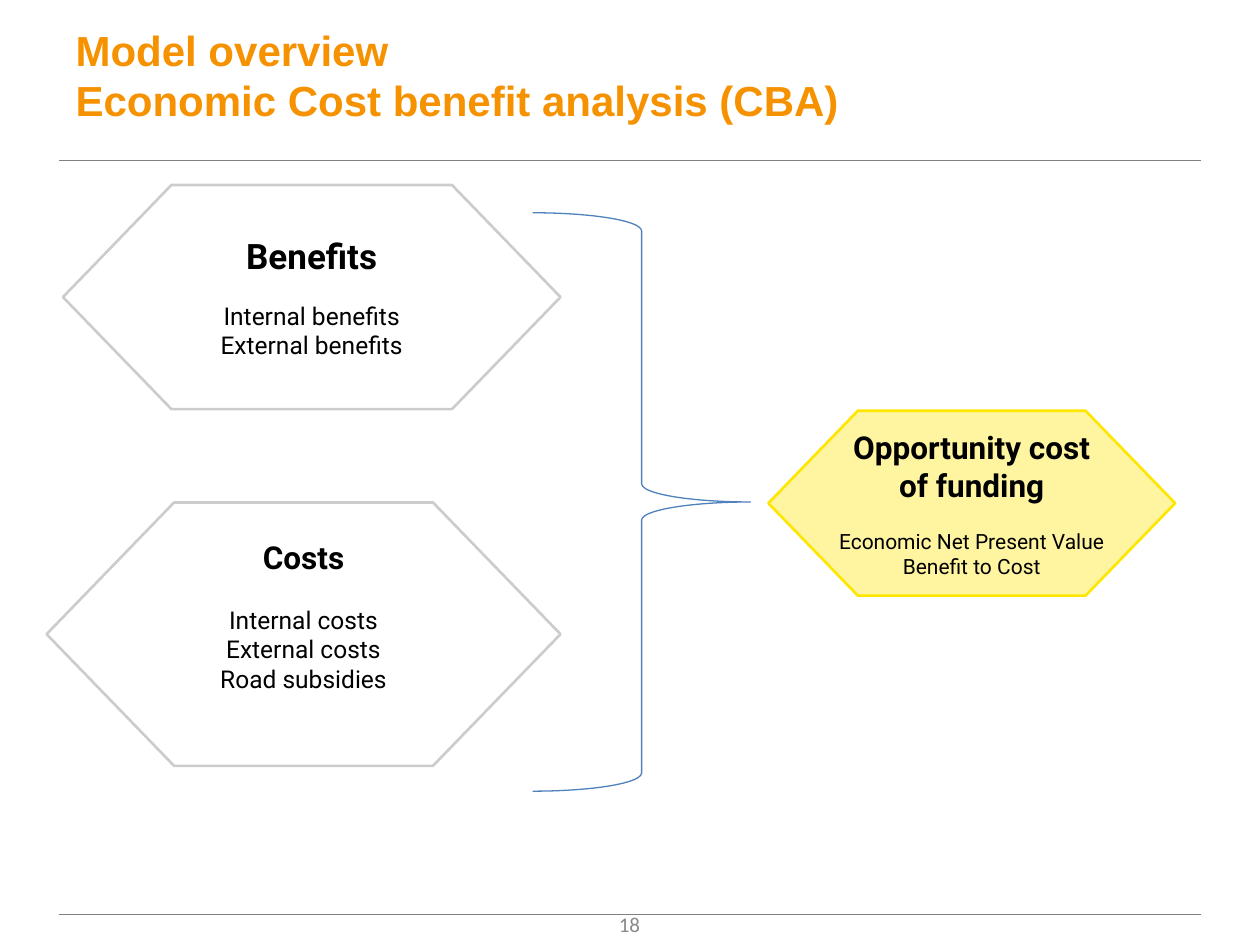
from pptx import Presentation
from pptx.dml.color import RGBColor
from pptx.enum.shapes import MSO_CONNECTOR, MSO_SHAPE
from pptx.enum.text import MSO_ANCHOR, MSO_AUTO_SIZE, PP_ALIGN
from pptx.oxml.ns import qn
from pptx.util import Cm, Pt
from lxml.etree import SubElement

THEME = {
    "title": dict(name="Arial", size=24, bold=True, color="F69200"),
    "page": dict(name="Calibri", size=12, bold=False, color="898989"),
    "text": dict(name="Roboto", color="000000"),
    "rule": "808080",
    "brace": "4F81BD",
    "white": "FFFFFF",
    "grey": "CCCCCC",
    "yellow": "FFE600",
}

TITLE = "Model overview\vEconomic Cost benefit analysis (CBA)"
TITLE_BOX = (1.27, 0.08, 22.86, 2.84)
PAGE, PAGE_BOX = "18", (9.73, 18.11, 5.92, 1.02)
RULE_X, RULE_YS = (1.19, 24.21), (3.23, 18.44)
BRACE_BOX = (10.74, 4.29, 4.39, 11.66)
INSET = 0.1

# Boxes are left, top, width, height in cm; gap is the space under the heading in points
HEXAGONS = [
    dict(box=(15.49, 8.28, 8.2, 3.73), heading="Opportunity cost of funding",
         lines=["Economic Net Present Value", "Benefit to Cost"],
         sizes=(18, 12), gap=14, fill="yellow", alpha=37, line="yellow", wrap=True),
    dict(box=(0.94, 10.13, 10.36, 5.31), heading="Costs",
         lines=["Internal costs", "External costs", "Road subsidies"],
         sizes=(18, 14), gap=16.5, fill="white", line="grey", bottom=0.85),
    dict(box=(1.27, 3.73, 10.03, 4.52), heading="Benefits",
         lines=["Internal benefits", "External benefits"],
         sizes=(20, 14), gap=14, fill="white", line="grey"),
]


def rgb(value):
    return RGBColor.from_string(value)


def cm(values):
    return [Cm(v) for v in values]


def set_font(font, name, size, bold, color):
    for key, value in dict(name=name, size=Pt(size), bold=bold).items():
        setattr(font, key, value)
    font.color.rgb = rgb(color)


def set_line(line, color, width):
    line.color.rgb = rgb(color)
    line.width = Pt(width)


def add_rule(slide, y):
    rule = slide.shapes.add_connector(
        MSO_CONNECTOR.STRAIGHT, *cm((RULE_X[0], y, RULE_X[1], y)))
    set_line(rule.line, THEME["rule"], 0.75)
    SubElement(rule._element.spPr, qn("a:effectLst"))


def add_hexagon(slide, item):
    sp = slide.shapes.add_shape(MSO_SHAPE.HEXAGON, *cm(item["box"]))
    sp.adjustments[0] = 0.484
    sp.shadow.inherit = False
    sp.fill.solid()
    sp.fill.fore_color.rgb = rgb(THEME[item["fill"]])
    if "alpha" in item:
        color = sp._element.spPr.find(qn("a:solidFill"))[0]
        SubElement(color, qn("a:alpha"), val=str(item["alpha"] * 1000))
    set_line(sp.line, THEME[item["line"]], 1.5)

    tf = sp.text_frame
    tf.word_wrap = item.get("wrap", False)
    tf.vertical_anchor = MSO_ANCHOR.MIDDLE
    for side in ("left", "top", "right"):
        setattr(tf, f"margin_{side}", Cm(INSET))
    tf.margin_bottom = Cm(item.get("bottom", INSET))

    heading_size, line_size = item["sizes"]
    for i, text in enumerate([item["heading"], *item["lines"]]):
        p = tf.add_paragraph() if i else tf.paragraphs[0]
        p.alignment = PP_ALIGN.CENTER
        if i == 1:
            p.space_before = Pt(item["gap"])
        r = p.add_run()
        r.text = text
        set_font(r.font, size=line_size if i else heading_size,
                 bold=i == 0, **THEME["text"])


def add_brace(slide):
    sp = slide.shapes.add_shape(MSO_SHAPE.RIGHT_BRACE, *cm(BRACE_BOX))
    sp.shadow.inherit = False
    sp.fill.background()
    set_line(sp.line, THEME["brace"], 0.75)


def write(sp, text, style, alignment):
    tf = sp.text_frame
    tf.text = text
    tf.word_wrap = True
    tf.auto_size = MSO_AUTO_SIZE.NONE
    tf.vertical_anchor = MSO_ANCHOR.MIDDLE
    p = tf.paragraphs[0]
    p.alignment = alignment
    for r in p.runs:
        set_font(r.font, **THEME[style])


def main():
    prs = Presentation()
    prs.slide_width, prs.slide_height = cm((25.4, 19.05))
    slide = prs.slides.add_slide(prs.slide_layouts[5])

    title = slide.shapes.title
    title.left, title.top, title.width, title.height = cm(TITLE_BOX)
    write(title, TITLE, "title", PP_ALIGN.LEFT)

    for y in RULE_YS:
        add_rule(slide, y)
    page = slide.shapes.add_textbox(*cm(PAGE_BOX))
    write(page, PAGE, "page", PP_ALIGN.CENTER)

    for item in HEXAGONS:
        add_hexagon(slide, item)
    add_brace(slide)
    prs.save("out.pptx")


if __name__ == "__main__":
    main()
